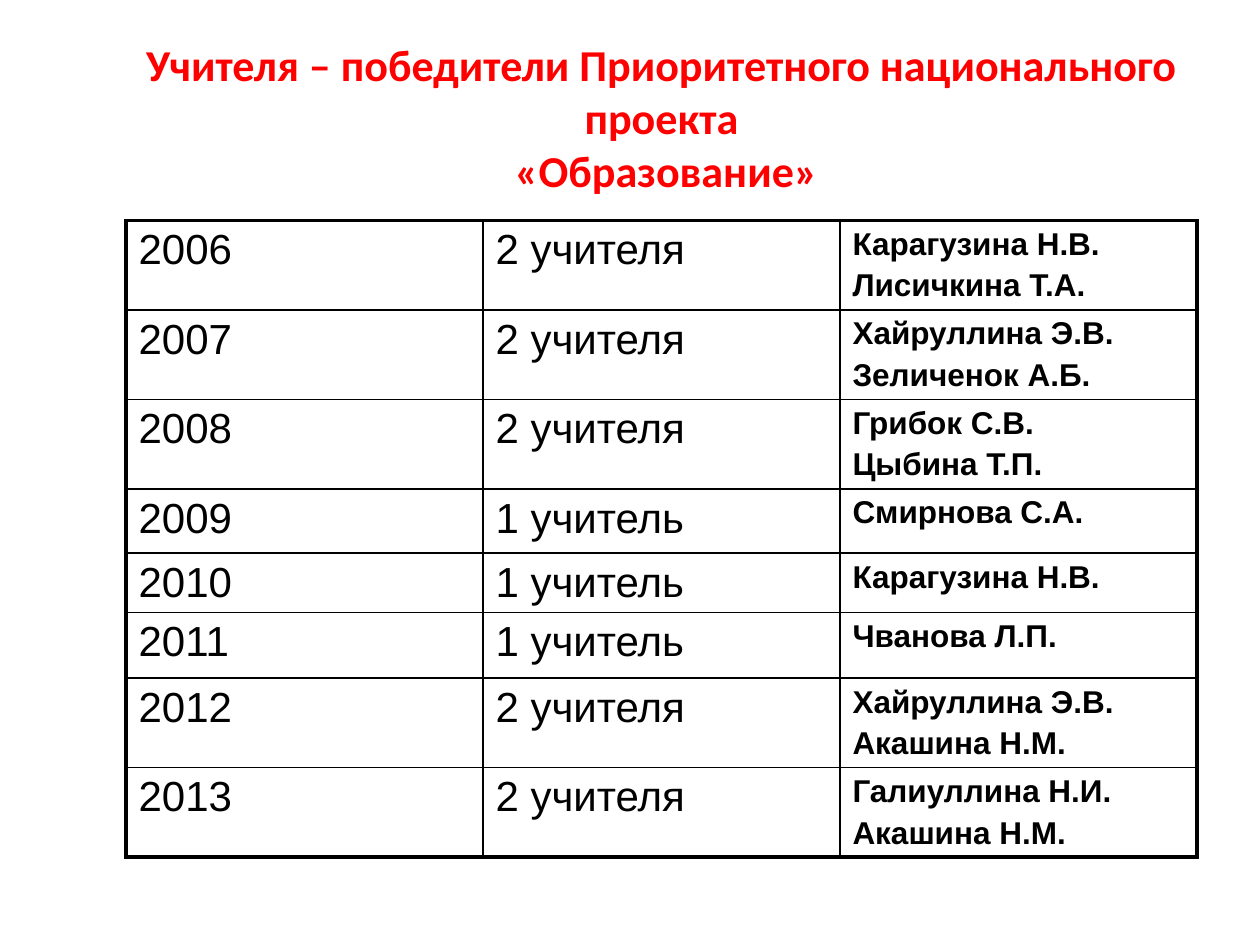
from lxml import etree
from pptx import Presentation
from pptx.dml.color import RGBColor
from pptx.enum.text import MSO_ANCHOR, PP_ALIGN
from pptx.oxml.ns import qn
from pptx.util import Inches, Pt

RED = RGBColor(0xFF, 0, 0)
BLACK = RGBColor(0, 0, 0)
MIDDLE = MSO_ANCHOR.MIDDLE
CENTER = PP_ALIGN.CENTER

# Content: title lines, then year, count, names
TITLE = ["Учителя – победители Приоритетного национального проекта",
         " «Образование»"]
ONE, TWO = "1 учитель", "2 учителя"
ROWS = [
    ("2006", TWO, ["Карагузина Н.В.", "Лисичкина Т.А."]),
    ("2007", TWO, ["Хайруллина Э.В.", "Зеличенок А.Б."]),
    ("2008", TWO, ["Грибок С.В.", "Цыбина Т.П."]),
    ("2009", ONE, ["Смирнова С.А."]),
    ("2010", ONE, ["Карагузина Н.В."]),
    ("2011", ONE, ["Чванова Л.П."]),
    ("2012", TWO, ["Хайруллина Э.В.", "Акашина Н.М."]),
    ("2013", TWO, ["Галиуллина Н.И.", "Акашина Н.М."]),
]
HEIGHTS = [0.62, 0.62, 0.62, 0.51, 0.47, 0.52, 0.62, 0.62]
COLS = 3
LEFT, WIDTH = Inches(1), Inches(8.5)
TOP, HEIGHT = Inches(1.75), Inches(5.33)
THIN, THICK = Pt(1), Pt(2.25)


def add_run(para, text, font, size, color, bold):
    run = para.add_run()
    run.text = text
    run.font.name = font
    run.font.size = Pt(size)
    run.font.color.rgb = color
    run.font.bold = bold


def space_before(para, percent):
    space = etree.SubElement(para._p.get_or_add_pPr(), qn("a:spcBef"))
    etree.SubElement(space, qn("a:spcPct"), val=str(percent * 1000))


def add_border(cell, side, width):
    line = etree.SubElement(cell._tc.get_or_add_tcPr(), qn("a:ln" + side),
                            w=str(width))
    fill = etree.SubElement(line, qn("a:solidFill"))
    etree.SubElement(fill, qn("a:srgbClr"), val=str(BLACK))


def fill_cell(cell, lines, size, bold):
    frame = cell.text_frame
    for i, text in enumerate(lines):
        para = frame.add_paragraph() if i else frame.paragraphs[0]
        space_before(para, 20)
        add_run(para, text, "Arial", size, BLACK, bold)


def main():
    prs = Presentation()
    prs.slide_width, prs.slide_height = Inches(10), Inches(7.5)
    slide = prs.slides.add_slide(prs.slide_layouts[5])

    # Title
    title = slide.shapes.title
    title.left, title.top = LEFT, Inches(0.3)
    title.width, title.height = WIDTH, Inches(1.25)
    title.text_frame.vertical_anchor = MIDDLE
    para = title.text_frame.paragraphs[0]
    para.alignment = CENTER
    for i, text in enumerate(TITLE):
        if i:
            para.add_line_break()
        add_run(para, text, "Calibri", 25.2, RED, True)

    # Table of winners by year
    holder = slide.shapes.add_table(len(ROWS), COLS, LEFT, TOP, WIDTH, HEIGHT)
    table = holder.table
    table.first_row = table.horz_banding = False
    last = len(ROWS) - 1
    for r, (year, count, names) in enumerate(ROWS):
        table.rows[r].height = Inches(HEIGHTS[r])
        for c, lines in enumerate(([year], [count], names)):
            cell = table.cell(r, c)
            is_name = c == COLS - 1
            fill_cell(cell, lines, 18 if is_name else 24, is_name)
            edges = {"L": c == 0, "R": is_name, "T": r == 0, "B": r == last}
            for side, outer in edges.items():
                add_border(cell, side, THICK if outer else THIN)
            cell.fill.background()
    holder.height = HEIGHT

    prs.save("out.pptx")


if __name__ == "__main__":
    main()
